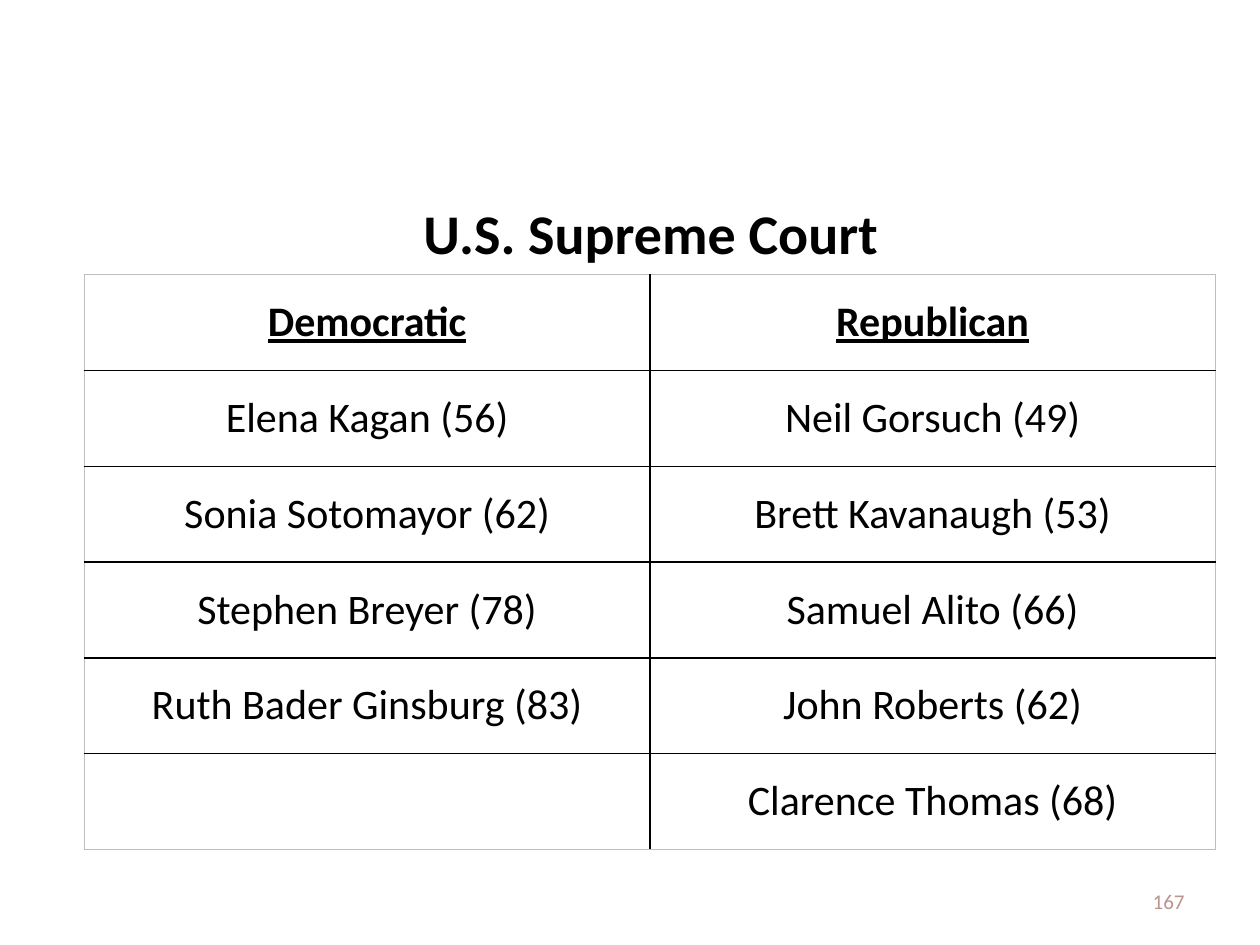
from lxml.etree import SubElement
from pptx import Presentation
from pptx.dml.color import RGBColor
from pptx.enum.text import MSO_ANCHOR, PP_ALIGN
from pptx.oxml.ns import qn
from pptx.util import Cm, Pt

BLACK = RGBColor(0x00, 0x00, 0x00)
WHITE = RGBColor(0xFF, 0xFF, 0xFF)
GRAY = RGBColor(0xBF, 0xBF, 0xBF)
ROSE = RGBColor(0xBB, 0x94, 0x91)

JUSTICES = [
    ("Democratic", "Republican"),
    ("Elena Kagan (56)", "Neil Gorsuch (49)"),
    ("Sonia Sotomayor (62)", "Brett Kavanaugh (53)"),
    ("Stephen Breyer (78)", "Samuel Alito (66)"),
    ("Ruth Bader Ginsburg (83)", "John Roberts (62)"),
    ("", "Clarence Thomas (68)"),
]


def write_text(text_frame, text, size=24, color=BLACK, bold=False,
               underline=False, align=PP_ALIGN.CENTER, font="Calibri"):
    paragraph = text_frame.paragraphs[0]
    paragraph.alignment = align
    run = paragraph.add_run()
    run.text = text
    run.font.name = font
    run.font.size = Pt(size)
    run.font.bold = bold
    run.font.underline = underline
    run.font.color.rgb = color


def add_border(cell, side, color, width):
    line = SubElement(cell._tc.get_or_add_tcPr(), qn(f"a:{side}"), w=str(Pt(width)))
    fill = SubElement(line, qn("a:solidFill"))
    SubElement(fill, qn("a:srgbClr"), val=str(color))


class SlideBuilder:
    def __init__(self, slide):
        self.slide = slide
        self.inner_line = (BLACK, 1)
        self.outer_line = (GRAY, 0.5)

    def title(self, text, left, top, width, height):
        shape = self.slide.shapes.title
        shape.left, shape.top, shape.width, shape.height = left, top, width, height
        shape.text_frame.vertical_anchor = MSO_ANCHOR.MIDDLE
        write_text(shape.text_frame, text, size=32, bold=True)

    def table(self, rows, left, top, column_width, row_height):
        row_count, column_count = len(rows), len(rows[0])
        frame = self.slide.shapes.add_table(
            row_count, column_count, left, top,
            column_width * column_count, row_height * row_count)
        table = frame.table
        for row in table.rows:
            row.height = row_height
        for row_index, row in enumerate(rows):
            for column_index, text in enumerate(row):
                cell = table.cell(row_index, column_index)
                self.format_cell(cell, {
                    "lnL": column_index == 0,
                    "lnR": column_index == column_count - 1,
                    "lnT": row_index == 0,
                    "lnB": row_index == row_count - 1,
                })
                if text:
                    header = row_index == 0
                    write_text(cell.text_frame, text, bold=header, underline=header)

    def format_cell(self, cell, outer_sides):
        cell.vertical_anchor = MSO_ANCHOR.MIDDLE
        cell.margin_left = cell.margin_right = Cm(0.18)
        cell.margin_top = cell.margin_bottom = 0
        for side, is_outer in outer_sides.items():
            add_border(cell, side, *(self.outer_line if is_outer else self.inner_line))
        cell.fill.solid()
        cell.fill.fore_color.rgb = WHITE

    def page_number(self, text, left, top, width, height):
        shape = self.slide.shapes.add_textbox(left, top, width, height)
        shape.text_frame.word_wrap = True
        shape.text_frame.vertical_anchor = MSO_ANCHOR.MIDDLE
        write_text(shape.text_frame, text, size=12, color=ROSE, align=PP_ALIGN.RIGHT)


def main():
    presentation = Presentation()
    presentation.slide_width, presentation.slide_height = Cm(25.4), Cm(19.05)
    title_only = presentation.slide_layouts[5]
    builder = SlideBuilder(presentation.slides.add_slide(title_only))

    # Heading
    builder.title("U.S. Supreme Court", Cm(2.11), Cm(3.53), Cm(22.02), Cm(2.31))
    # Justices by party
    builder.table(JUSTICES, Cm(1.7), Cm(5.54), Cm(11.4), Cm(1.93))
    # Page number
    builder.page_number("167", Cm(18.21), Cm(17.65), Cm(5.92), Cm(1.02))

    presentation.save("out.pptx")


if __name__ == "__main__":
    main()
